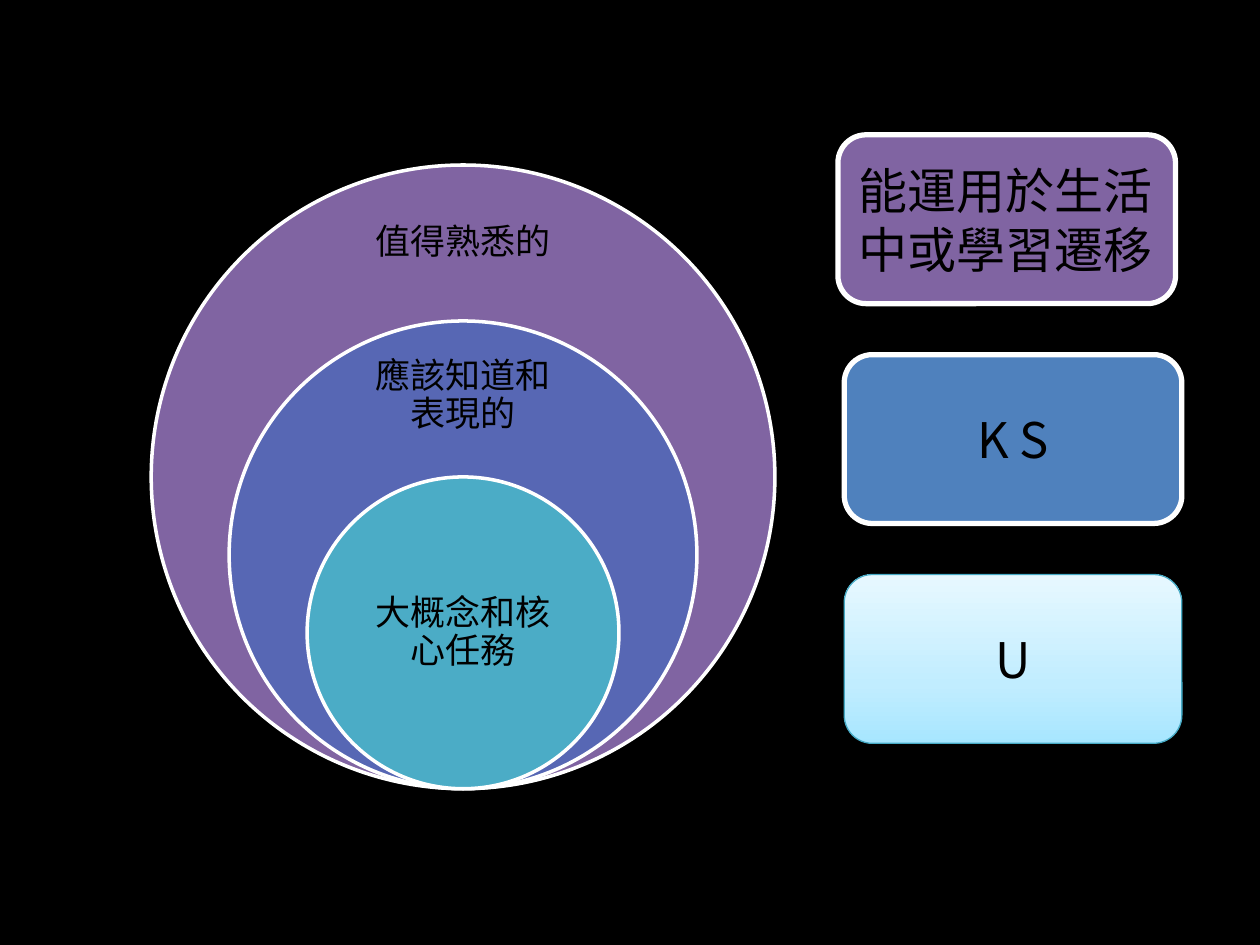
from copy import deepcopy

from lxml import etree
from pptx import Presentation, util as u
from pptx.dml.color import RGBColor
from pptx.enum import shapes, text
from pptx.oxml.ns import qn

FONT = "Noto Sans CJK SC"
COLORS = {
    "black": "000000", "white": "FFFFFF", "purple": "8064A2", "indigo": "5767B4",
    "teal": "4BACC6", "blue": "4F81BD", "edge": "46AAC5",
    "sky_deep": "A7E6FF", "sky_mid": "C1EDFF", "sky_pale": "E7F8FF",
}
RINGS = [
    # wording, colour, diameter share, label top share, label height share
    ("值得熟悉的", "purple", 1, 0.05, 0.15),
    ("應該知道和表現的", "indigo", 0.75, 0.3, 0.14),
    ("大概念和核心任務", "teal", 0.5, 0.625, 0.25),
]
CARDS = [
    ("能運用於生活中或學習遷移", ["purple"], "white", 3, text.PP_ALIGN.LEFT, -0.05),
    ("K S", ["blue"], "white", 3, text.PP_ALIGN.CENTER, 0),
    ("U", ["sky_deep", "sky_mid", "sky_pale"], "edge", 0.75, text.PP_ALIGN.CENTER, 0),
]


def rgb(name):
    """Return the named colour."""
    return RGBColor.from_string(COLORS[name])


def write(frame, wording, size, align):
    """Write one centred-anchor paragraph and return it."""
    frame.word_wrap = True
    frame.vertical_anchor = text.MSO_ANCHOR.MIDDLE
    paragraph = frame.paragraphs[0]
    paragraph.text = wording
    paragraph.alignment = align
    font = paragraph.font
    font.size, font.name = u.Pt(size), FONT
    font.color.rgb = rgb("black")
    etree.SubElement(paragraph._p.pPr.find(qn("a:defRPr")), qn("a:ea"), typeface=FONT)
    return paragraph


def add_outlined(slide, kind, box, edge, weight):
    """Add a preset shape with a coloured outline and no shadow."""
    shape = slide.shapes.add_shape(kind, *map(u.Inches, box))
    shape.shadow.inherit = False
    shape.line.color.rgb = rgb(edge)
    shape.line.width = u.Pt(weight)
    return shape


def paint(shape, names):
    """Fill with one colour, or with a three-stop gradient rising from the bottom."""
    fill = shape.fill
    if len(names) == 1:
        fill.solid()
        fill.fore_color.rgb = rgb(names[0])
        return
    fill.gradient()
    fill.gradient_angle = 90
    stops = shape._element.spPr.find(qn("a:gradFill")).find(qn("a:gsLst"))
    stops.insert(1, deepcopy(stops[0]))
    for stop, name, position in zip(fill.gradient_stops, names, (0, 0.35, 1)):
        stop.color.rgb = rgb(name)
        stop.position = position


def add_rings(slide, left, top, size):
    """Nest circles that share their lowest point, each with a label."""
    label_width = 0.35 * size
    for wording, color, share, label_top, label_height in RINGS:
        diameter = share * size
        box = (left + (size - diameter) / 2, top + size - diameter, diameter, diameter)
        paint(add_outlined(slide, shapes.MSO_SHAPE.OVAL, box, "white", 2), [color])
        label = slide.shapes.add_textbox(*map(u.Inches, (
            left + (size - label_width) / 2, top + label_top * size,
            label_width, label_height * size)))
        frame = label.text_frame
        frame.margin_left = frame.margin_right = u.Inches(0.16)
        frame.margin_top = frame.margin_bottom = u.Inches(0.16)
        write(frame, wording, 20, text.PP_ALIGN.CENTER).line_spacing = 0.9


def add_cards(slide, left, top, width, height):
    """Stack the rounded cards, each as tall as half its width, at equal gaps."""
    card_height = width / 2
    pitch = (height - card_height) / (len(CARDS) - 1)
    for row, (wording, fills, edge, weight, align, shift) in enumerate(CARDS):
        box = (left + shift, top + row * pitch, width, card_height)
        card = add_outlined(slide, shapes.MSO_SHAPE.ROUNDED_RECTANGLE, box, edge, weight)
        paint(card, fills)
        write(card.text_frame, wording, 28, align)


def main():
    """Build the slide and save it."""
    deck = Presentation()
    deck.slide_width, deck.slide_height = u.Inches(10), u.Inches(7.5)
    slide = deck.slides.add_slide(deck.slide_layouts[6])
    slide.background.fill.solid()
    slide.background.fill.fore_color.rgb = rgb("black")
    add_rings(slide, 1.2, 1.31, 4.95)
    add_cards(slide, 6.7, 1.07, 2.68, 4.83)
    deck.save("out.pptx")


if __name__ == "__main__":
    main()
